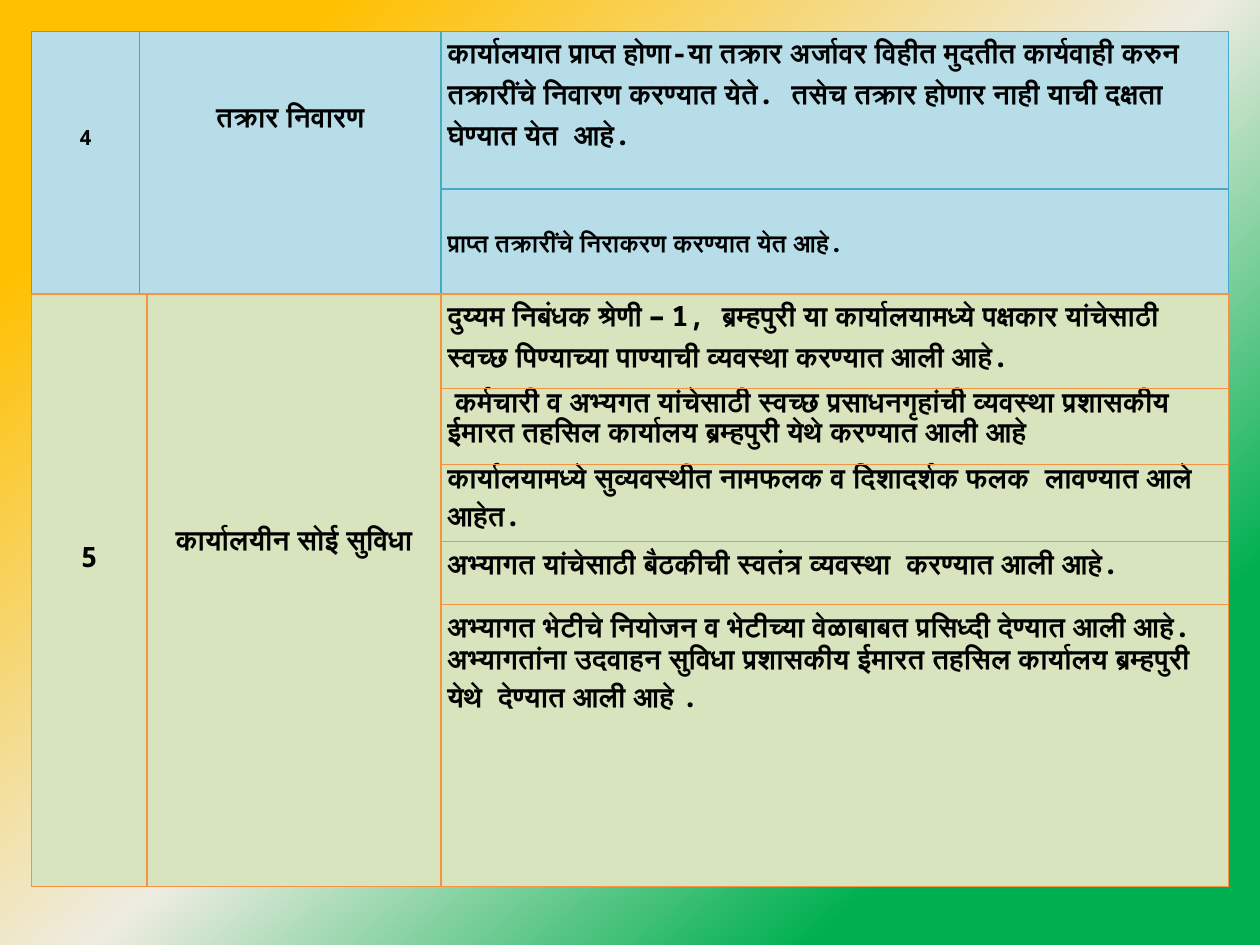
from copy import deepcopy

from pptx import Presentation
from pptx.dml.color import RGBColor
from pptx.enum.text import PP_ALIGN
from pptx.oxml import parse_xml
from pptx.oxml.ns import nsdecls
from pptx.util import Pt

# Content: each detail is a list of paragraphs, a size and the space above its text
SECTIONS = [
    {
        "palette": "complaints",
        "top": 18,
        "columns": [61.92, 172.08, 450],
        "rows": [90, 60],
        "number": (["4"], 12, 51),
        "subject": (["तक्रार निवारण"], 16, 41),
        "details": [
            (["कार्यालयात प्राप्त होणा-या तक्रार अर्जावर विहीत मुदतीत कार्यवाही करुन "
              "तक्रारींचे निवारण करण्यात येते. तसेच तक्रार होणार नाही याची दक्षता "
              "घेण्यात येत  आहे."], 16, 0),
            (["प्राप्त तक्रारींचे निराकरण करण्यात येत आहे."], 14, 20),
        ],
    },
    {
        "palette": "amenities",
        "top": 168,
        "columns": [66, 168, 450],
        "rows": [54, 43.5, 44, 36, 161],
        "number": (["5"], 16, 138),
        "subject": (["कार्यालयीन सोई सुविधा"], 16, 133),
        "details": [
            (["दुय्यम निबंधक श्रेणी – 1, ब्रम्हपुरी या कार्यालयामध्ये पक्षकार यांचेसाठी "
              "स्वच्छ पिण्याच्या पाण्याची व्यवस्था करण्यात आली आहे."], 16, 0),
            ([" कर्मचारी व अभ्यगत यांचेसाठी स्वच्छ प्रसाधनगृहांची व्यवस्था प्रशासकीय "
              "ईमारत तहसिल कार्यालय ब्रम्हपुरी येथे करण्यात आली आहे"], 16, 0),
            (["कार्यालयामध्ये सुव्यवस्थीत नामफलक व दिशादर्शक फलक  लावण्यात आले "
              "आहेत."], 16, 0),
            (["अभ्यागत यांचेसाठी बैठकीची स्वतंत्र व्यवस्था  करण्यात आली आहे."], 16, 0),
            (["अभ्यागत भेटीचे नियोजन व भेटीच्या वेळाबाबत प्रसिध्दी देण्यात आली आहे.",
              "अभ्यागतांना उदवाहन सुविधा प्रशासकीय ईमारत तहसिल कार्यालय ब्रम्हपुरी "
              "येथे  देण्यात आली आहे ."], 16, 0),
        ],
    },
]

THEME = {
    "font": "Noto Sans Mono",
    "text": "000000",
    "line_spacing": 1.07,
    "border_width": 0.75,
    "complaints": {"fill": "B7DEE8", "border": "46AAC5"},
    "amenities": {"fill": "D7E4BD", "border": "F69240"},
    "background": [(0.19, "00B050"), (0.49, "EEECE1"), (0.86, "FFC000")],
    "background_angle": 130,
}
LEFT = 18


def paint_background(slide):
    fill = slide.background.fill
    fill.gradient()
    fill.gradient_angle = THEME["background_angle"]
    # The default gradient has two stops; the third is added in XML
    stop_list = fill._fill._gradFill.gsLst
    stop_list.append(deepcopy(stop_list[-1]))
    for stop, (position, color) in zip(fill.gradient_stops, THEME["background"]):
        stop.color.rgb = RGBColor.from_string(color)
        stop.position = position


def style_cell(cell, palette):
    cell.fill.solid()
    cell.fill.fore_color.rgb = RGBColor.from_string(palette["fill"])
    properties = cell._tc.get_or_add_tcPr()
    for index, side in enumerate(("lnL", "lnR", "lnT", "lnB")):
        properties.insert(index, parse_xml(
            f'<a:{side} {nsdecls("a")} w="{Pt(THEME["border_width"])}"><a:solidFill>'
            f'<a:srgbClr val="{palette["border"]}"/></a:solidFill></a:{side}>'))


def write_cell(cell, content, alignment):
    paragraphs, size, space_above = content
    cell.margin_left = cell.margin_right = Pt(3.6)
    cell.margin_top, cell.margin_bottom = Pt(space_above), Pt(0)
    cell.text_frame.text = "\n".join(paragraphs)
    for paragraph in cell.text_frame.paragraphs:
        paragraph.alignment = alignment
        paragraph.line_spacing = THEME["line_spacing"]
        font = paragraph.runs[0].font
        font.name, font.size, font.bold = THEME["font"], Pt(size), True
        font.color.rgb = RGBColor.from_string(THEME["text"])


def add_section(slide, section):
    columns, rows = section["columns"], section["rows"]
    table = slide.shapes.add_table(
        len(rows), len(columns), Pt(LEFT), Pt(section["top"]),
        Pt(sum(columns)), Pt(sum(rows))).table
    table.first_row = table.horz_banding = False
    for column, width in zip(table.columns, columns):
        column.width = Pt(width)
    for row, height in zip(table.rows, rows):
        row.height = Pt(height)
    for cell in table.iter_cells():
        style_cell(cell, THEME[section["palette"]])

    # Number and subject span all rows of the section
    for column, key in enumerate(("number", "subject")):
        table.cell(0, column).merge(table.cell(len(rows) - 1, column))
        write_cell(table.cell(0, column), section[key], PP_ALIGN.CENTER)
    for row, detail in enumerate(section["details"]):
        write_cell(table.cell(row, 2), detail, PP_ALIGN.LEFT)


def main():
    presentation = Presentation()
    presentation.slide_width, presentation.slide_height = Pt(720), Pt(540)
    slide = presentation.slides.add_slide(presentation.slide_layouts[6])
    paint_background(slide)
    for section in SECTIONS:
        add_section(slide, section)
    presentation.save("out.pptx")


if __name__ == "__main__":
    main()
